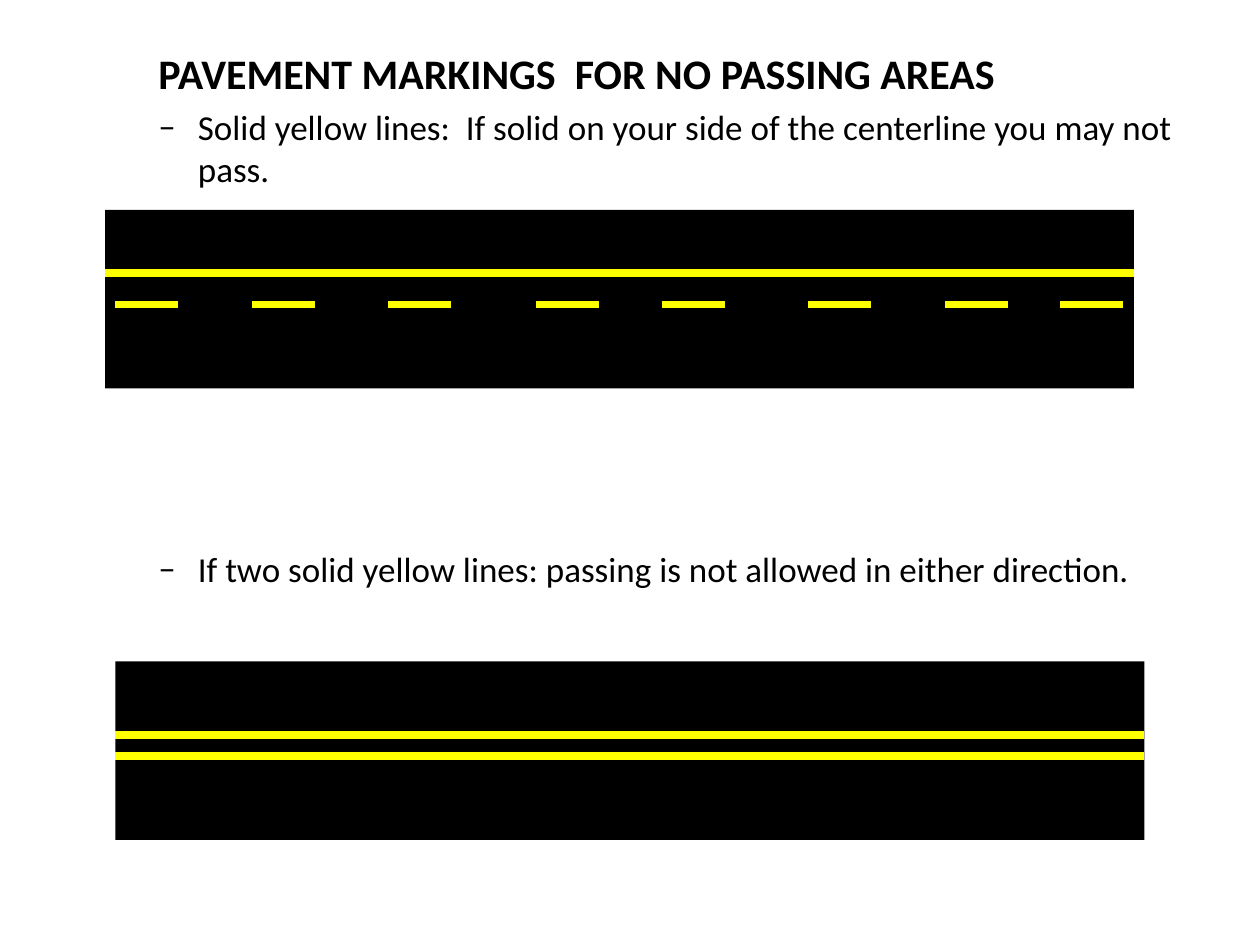
from lxml import etree
from pptx import Presentation
from pptx.dml.color import RGBColor
from pptx.enum import shapes, text
from pptx.oxml.ns import qn
from pptx.util import Pt

BLACK = RGBColor(0, 0, 0)
YELLOW = RGBColor(255, 255, 0)
FONT = "Calibri"
STRIPE_WIDTH = 4.5
DASH_LENGTH = 36
DASH_STARTS = (6, 84, 162, 246, 318, 402, 480, 546)

# Wording, size, bold, space before, bullet
RULES = [
    ("PAVEMENT MARKINGS  FOR NO PASSING AREAS", 24, True, 0, None),
    ("Solid yellow lines:  If solid on your side of the centerline "
     "you may not pass.", 20, False, 4, "–"),
    ("If two solid yellow lines: passing is not allowed in either direction.",
     20, False, 205, "–"),
]


def set_indent(para, bullet):
    """Hang the first line and give the paragraph its bullet, if any."""
    props = para._p.get_or_add_pPr()
    props.set("marL", str(Pt(58.5)))
    props.set("indent", str(Pt(-22.5)))
    if bullet:
        etree.SubElement(props, qn("a:buFont")).set("typeface", FONT)
        etree.SubElement(props, qn("a:buChar")).set("char", bullet)
    else:
        etree.SubElement(props, qn("a:buNone"))


def add_rules(page, left, top, width, height):
    """Heading and the two passing rules."""
    box = page.shapes.add_textbox(Pt(left), Pt(top), Pt(width), Pt(height))
    frame = box.text_frame
    frame.word_wrap = True
    frame.vertical_anchor = text.MSO_ANCHOR.TOP
    for index, (wording, size, bold, gap, bullet) in enumerate(RULES):
        para = frame.add_paragraph() if index else frame.paragraphs[0]
        para.level = 1
        para.space_before = Pt(gap)
        set_indent(para, bullet)
        span = para.add_run()
        span.text = wording
        span.font.name = FONT
        span.font.size = Pt(size)
        span.font.bold = bold
        span.font.color.rgb = BLACK


def add_stripe(page, left, top, length):
    """One horizontal yellow stripe."""
    stripe = page.shapes.add_connector(
        shapes.MSO_CONNECTOR.STRAIGHT,
        Pt(left), Pt(top), Pt(left + length), Pt(top))
    stripe.line.color.rgb = YELLOW
    stripe.line.width = Pt(STRIPE_WIDTH)
    etree.SubElement(stripe._element.spPr, qn("a:effectLst"))


def add_road(page, left, top, width, height, solid, dashed=()):
    """Black road with solid and dashed stripes at offsets from its top."""
    road = page.shapes.add_shape(
        shapes.MSO_SHAPE.RECTANGLE, Pt(left), Pt(top), Pt(width), Pt(height))
    road.shadow.inherit = False
    road.fill.solid()
    road.fill.fore_color.rgb = BLACK
    road.line.fill.background()
    for offset in solid:
        add_stripe(page, left, top + offset, width)
    for offset in dashed:
        for start in DASH_STARTS:
            add_stripe(page, left + start, top + offset, DASH_LENGTH)


def main():
    deck = Presentation()
    deck.slide_width, deck.slide_height = Pt(720), Pt(540)
    page = deck.slides.add_slide(deck.slide_layouts[6])

    add_rules(page, 47.5, 23.75, 672.5, 486)
    # Double solid line: no passing either way
    add_road(page, 66, 378, 588, 102, solid=(42, 54))
    # Solid and dashed line: no passing on the solid side
    add_road(page, 60, 120, 588, 102, solid=(36,), dashed=(54,))

    deck.save("out.pptx")


if __name__ == "__main__":
    main()
